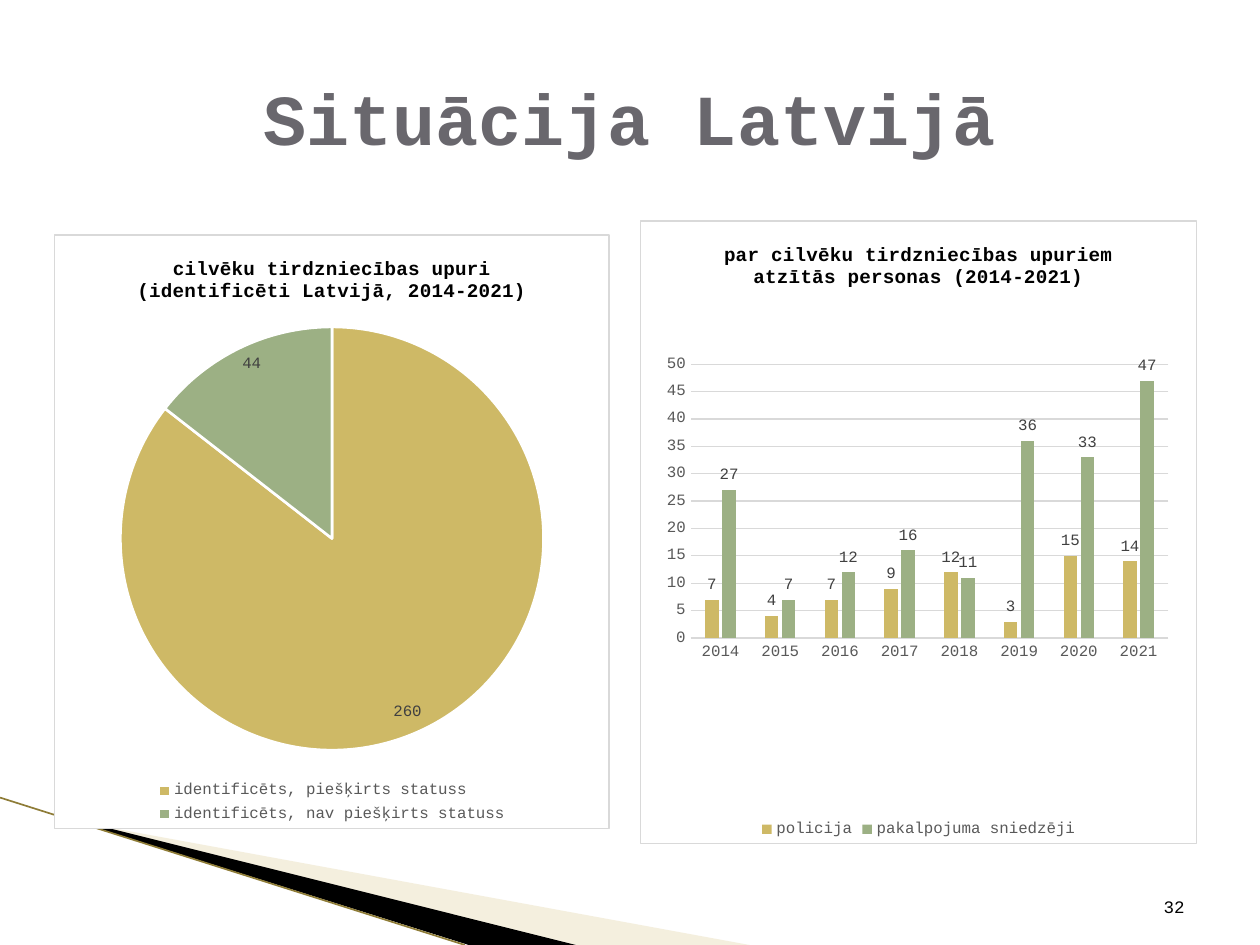
import pptx
import pptx.chart.data
import pptx.dml.color
import pptx.enum.chart
import pptx.enum.shapes
import pptx.enum.text
import pptx.oxml
import pptx.oxml.ns
import pptx.util

FONT = "Courier New"
COLOURS = {
    "heading": "69676D", "black": "000000", "white": "FFFFFF",
    "gold": "CEB966", "green": "9CB084", "cream": "E4D7AD", "olive": "8E7C37",
    "rule": "D9D9D9", "axis": "595959", "value": "404040",
}
SERIES_COLOURS = ["gold", "green"]

HEADING = "Situācija Latvijā"
PAGE_NUMBER = "32"
RECOGNISED = {
    "title": "par cilvēku tirdzniecības upuriem atzītās personas (2014-2021)",
    "kind": pptx.enum.chart.XL_CHART_TYPE.COLUMN_CLUSTERED,
    "area": (50.8, 23.33, 44.2, 66),
    "categories": [str(year) for year in range(2014, 2022)],
    "series": [
        ("policija", [7, 4, 7, 9, 12, 3, 15, 14]),
        ("pakalpojuma sniedzēji", [27, 7, 12, 16, 11, 36, 33, 47]),
    ],
}
IDENTIFIED = {
    "title": "cilvēku tirdzniecības upuri (identificēti Latvijā, 2014-2021)",
    "kind": pptx.enum.chart.XL_CHART_TYPE.PIE,
    "area": (4.3, 24.8, 44.1, 62.93),
    "categories": ["identificēts, piešķirts statuss", "identificēts, nav piešķirts statuss"],
    "series": [("Series 1", [260, 44])],
}
WEDGES = [
    ("cream", 40, [(5.5, 86.8), (59.5, 100), (45.6, 100), (5.5, 86.67)]),
    ("black", 100, [(5.3, 86.53), (45.7, 100), (37.2, 100), (5.4, 86.67)]),
]
EDGE = [(0, 84.4), (36.9, 100)]

deck = pptx.Presentation()
deck.slide_width = pptx.util.Inches(10)
deck.slide_height = pptx.util.Inches(7.5)
slide = deck.slides.add_slide(deck.slide_layouts[6])


def place(*percents):
    sides = (deck.slide_width, deck.slide_height) * 2
    return [round(side * percent / 100) for side, percent in zip(sides, percents)]


def rgb(name):
    return pptx.dml.color.RGBColor.from_string(COLOURS[name])


def style(font, size, colour, bold=False):
    font.name, font.size, font.bold = FONT, pptx.util.Pt(size), bold
    font.color.rgb = rgb(colour)


def paint(fill, colour):
    fill.solid()
    fill.fore_color.rgb = rgb(colour)


def outline(line, colour, width):
    line.color.rgb = rgb(colour)
    line.width = pptx.util.Pt(width)


def xml(tag, body="", attributes=""):
    spaces = pptx.oxml.ns.nsdecls("a", "c")
    return pptx.oxml.parse_xml(f"<{tag} {spaces} {attributes}>{body}</{tag}>")


def write(text, area, size, colour, bold, align, anchor):
    frame = slide.shapes.add_textbox(*place(*area)).text_frame
    frame.word_wrap = True
    frame.vertical_anchor = anchor
    paragraph = frame.paragraphs[0]
    paragraph.alignment = align
    run = paragraph.add_run()
    run.text = text
    style(run.font, size, colour, bold)


def draw_chart(content):
    data = pptx.chart.data.CategoryChartData()
    data.categories = content["categories"]
    for name, values in content["series"]:
        data.add_series(name, values)
    chart = slide.shapes.add_chart(content["kind"], *place(*content["area"]), data).chart
    style(chart.font, 10, "black")

    chart.has_title = True
    title_run = chart.chart_title.text_frame.paragraphs[0].add_run()
    title_run.text = content["title"]
    style(title_run.font, 11, "black", True)
    chart.chart_title.include_in_layout = False

    chart.has_legend = True
    chart.legend.position = pptx.enum.chart.XL_LEGEND_POSITION.BOTTOM
    chart.legend.include_in_layout = False
    style(chart.legend.font, 9, "axis")

    root = chart.element
    if root.find(pptx.oxml.ns.qn("c:roundedCorners")) is None:
        root.insert(0, xml("c:roundedCorners", attributes='val="0"'))
    solid = '<a:solidFill><a:srgbClr val="{}"/></a:solidFill>'
    border = f'<a:ln w="9525">{solid.format(COLOURS["rule"])}</a:ln>'
    frame = xml("c:spPr", solid.format(COLOURS["white"]) + border)
    root.find(pptx.oxml.ns.qn("c:chart")).addnext(frame)
    return chart


def label(series, position):
    labels = series.data_labels
    labels.show_value = True
    labels.position = position
    style(labels.font, 9, "value")


for colour, opacity, corners in WEDGES:
    start, *others = [place(*corner) for corner in corners]
    builder = slide.shapes.build_freeform(*start)
    builder.add_line_segments(others, close=True)
    wedge = builder.convert_to_shape()
    wedge.shadow.inherit = False
    paint(wedge.fill, colour)
    wedge.line.fill.background()
    if opacity < 100:
        tint = wedge.fill._xPr.find(".//" + pptx.oxml.ns.qn("a:srgbClr"))
        tint.append(xml("a:alpha", attributes=f'val="{opacity * 1000}"'))

edge = slide.shapes.add_connector(
    pptx.enum.shapes.MSO_CONNECTOR.STRAIGHT, *place(*EDGE[0], *EDGE[1]))
outline(edge.line, "olive", 0.95)
edge._element.spPr.append(xml("a:effectLst"))

align = pptx.enum.text.PP_ALIGN
anchor = pptx.enum.text.MSO_ANCHOR
write(HEADING, (5, 4, 90, 16.67), 41, "heading", True, align.CENTER, anchor.MIDDLE)

recognised = draw_chart(RECOGNISED)
columns = recognised.plots[0]
columns.gap_width, columns.overlap = 219, -27
columns.vary_by_categories = False
for series, colour in zip(columns.series, SERIES_COLOURS):
    paint(series.format.fill, colour)
    label(series, pptx.enum.chart.XL_LABEL_POSITION.OUTSIDE_END)
years, counts = recognised.category_axis, recognised.value_axis
for axis in (years, counts):
    axis.major_tick_mark = axis.minor_tick_mark = pptx.enum.chart.XL_TICK_MARK.NONE
    style(axis.tick_labels.font, 9, "axis")
outline(years.format.line, "rule", 0.75)
counts.format.line.fill.background()
counts.minimum_scale, counts.maximum_scale, counts.major_unit = 0, 50, 5
counts.has_major_gridlines = True
outline(counts.major_gridlines.format.line, "rule", 0.75)

plot_area = recognised.element.find(".//" + pptx.oxml.ns.qn("c:plotArea"))
for old in plot_area.findall(pptx.oxml.ns.qn("c:layout")):
    plot_area.remove(old)
modes = '<c:layoutTarget val="inner"/><c:xMode val="edge"/><c:yMode val="edge"/>'
shares = {"x": 0.09, "y": 0.23, "w": 0.86, "h": 0.44}
sizes = "".join(f'<c:{side} val="{share}"/>' for side, share in shares.items())
plot_area.insert(0, xml("c:layout", f"<c:manualLayout>{modes}{sizes}</c:manualLayout>"))

write(PAGE_NUMBER, (71.7, 91.07, 23.3, 6.67), 10, "black", False, align.RIGHT, anchor.BOTTOM)

victims = draw_chart(IDENTIFIED).plots[0].series[0]
for index, colour in enumerate(SERIES_COLOURS):
    slice_format = victims.points[index].format
    paint(slice_format.fill, colour)
    outline(slice_format.line, "white", 1.5)
label(victims, pptx.enum.chart.XL_LABEL_POSITION.INSIDE_END)

deck.save("out.pptx")
